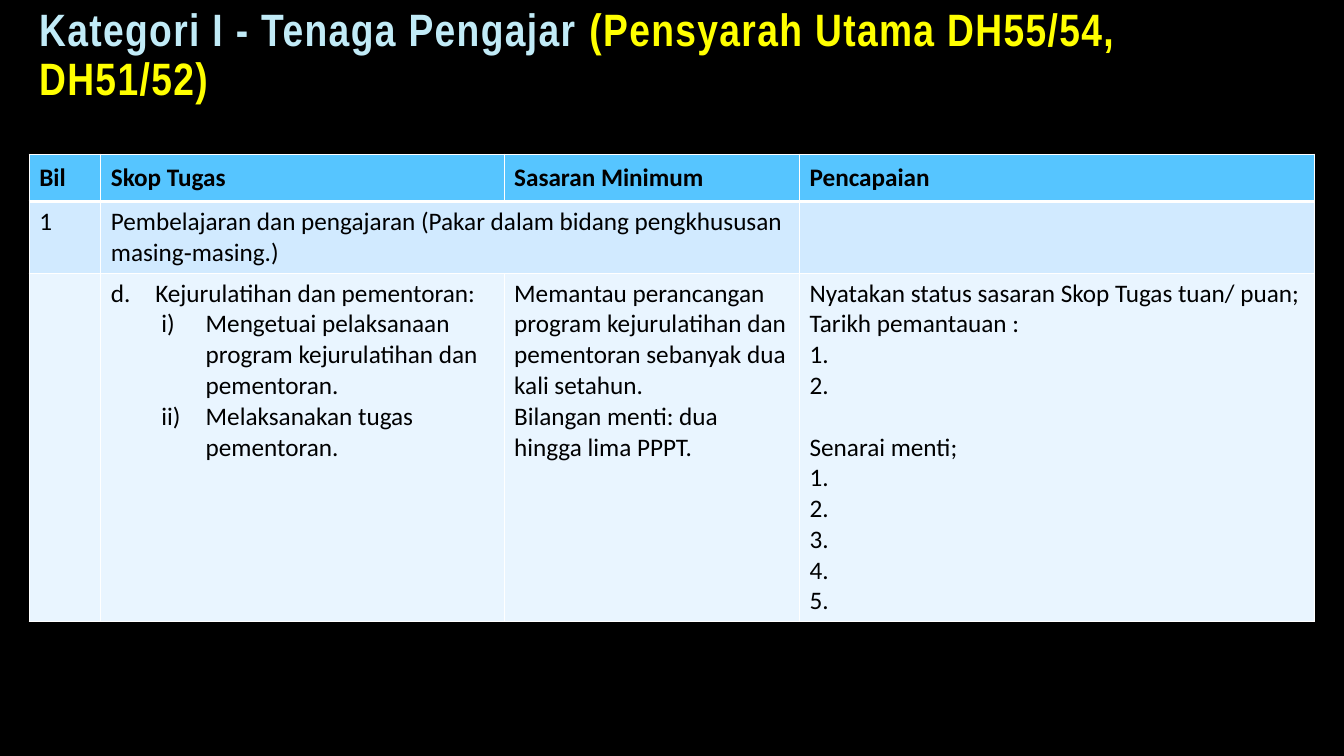
from lxml.etree import SubElement
from pptx import Presentation
from pptx.dml.color import RGBColor
from pptx.enum.text import MSO_ANCHOR
from pptx.oxml import parse_xml
from pptx.oxml.ns import nsdecls, qn
from pptx.util import Inches, Pt

BLACK = RGBColor(0x00, 0x00, 0x00)
WHITE = RGBColor(0xFF, 0xFF, 0xFF)
PALE_CYAN = RGBColor(0xC1, 0xEB, 0xF7)
YELLOW = RGBColor(0xFF, 0xFF, 0x00)
HEADER_BLUE = RGBColor(0x56, 0xC5, 0xFF)
TOPIC_BLUE = RGBColor(0xD1, 0xEA, 0xFF)
DETAIL_BLUE = RGBColor(0xE9, 0xF5, 0xFF)

TITLE_FORMAT = {"name": "Arial Narrow", "size": Pt(32.4), "bold": True}
HEADER_FORMAT = {"name": "Calibri", "size": Pt(18), "bold": True}
BODY_FORMAT = {**HEADER_FORMAT, "bold": False}


def add_span(para, text, values, color):
    span = para.add_run()
    span.text = text
    for name, value in values.items():
        setattr(span.font, name, value)
    span.font.color.rgb = color
    return span


def add_border(cell, side, points):
    cell._tc.get_or_add_tcPr().append(parse_xml(
        f'<a:ln{side} {nsdecls("a")} w="{Pt(points)}"><a:solidFill>'
        f'<a:srgbClr val="{WHITE}"/></a:solidFill></a:ln{side}>'))


deck = Presentation()
deck.slide_width, deck.slide_height = Inches(13.33), Inches(7.5)
page = deck.slides.add_slide(deck.slide_layouts[6])
page.background.fill.solid()
page.background.fill.fore_color.rgb = BLACK

# Task table: each cell is a list of paragraphs
rows = [
    [["Bil"], ["Skop Tugas"], ["Sasaran Minimum"], ["Pencapaian"]],
    [["1"], ["Pembelajaran dan pengajaran (Pakar dalam bidang pengkhususan masing‐masing.)"], [], []],
    [[],
     ["Kejurulatihan dan pementoran:",
      "Mengetuai pelaksanaan program kejurulatihan dan pementoran.",
      "Melaksanakan tugas pementoran."],
     ["Memantau perancangan program kejurulatihan dan pementoran sebanyak dua kali setahun.",
      "Bilangan menti: dua hingga lima PPPT."],
     ["Nyatakan status sasaran Skop Tugas tuan/ puan;", "Tarikh pemantauan :", "1.", "2.",
      "Senarai menti;", "1.", "2.", "3.", "4.", "5."]],
]
row_fills = [HEADER_BLUE, TOPIC_BLUE, DETAIL_BLUE]
frame = page.shapes.add_table(3, 4, Inches(0.29), Inches(1.53), Inches(12.75), Inches(4.87))
table = frame.table
for column, width in zip(table.columns, [0.71, 4, 2.93, 5.11]):
    column.width = Inches(width)
for row, height in zip(table.rows, [0.47, 0.43, 2.52]):
    row.height = Inches(height)

for row_index, (row, fill) in enumerate(zip(rows, row_fills)):
    is_header = row_index == 0
    for column_index, texts in enumerate(row):
        cell = table.cell(row_index, column_index)
        for side in "LRTB":
            under_header = (row_index, side) in [(0, "B"), (1, "T")]
            add_border(cell, side, 3 if under_header else 1)
        cell.fill.solid()
        cell.fill.fore_color.rgb = fill
        if is_header:
            cell.vertical_anchor = MSO_ANCHOR.MIDDLE
        for index, text in enumerate(texts):
            para = cell.text_frame.paragraphs[0] if index == 0 else cell.text_frame.add_paragraph()
            add_span(para, text, HEADER_FORMAT if is_header else BODY_FORMAT, BLACK)
table.cell(1, 1).merge(table.cell(1, 2))

# Gap above the mentee list
table.cell(2, 3).text_frame.paragraphs[4].space_before = Pt(22)

# Numbering of the task scope
for index, para in enumerate(table.cell(2, 1).text_frame.paragraphs):
    para.level = min(index, 1)
    properties = para._p.get_or_add_pPr()
    properties.set("marL", str(Inches(0.94 if index else 0.44)))
    properties.set("indent", str(Inches(-0.44)))
    numbering = SubElement(properties, qn("a:buAutoNum"))
    numbering.set("type", "romanLcParenR" if index else "alphaLcPeriod")
    if index == 0:
        numbering.set("startAt", "4")

# Title
box = page.shapes.add_textbox(Inches(0.29), Inches(0.42), Inches(11.37), Inches(0.67))
box.text_frame.word_wrap = True
box.text_frame.vertical_anchor = MSO_ANCHOR.BOTTOM
para = box.text_frame.paragraphs[0]
para.line_spacing = 0.9
for text, color in [("Kategori I - Tenaga Pengajar ", PALE_CYAN),
                    ("(Pensyarah Utama DH55/54, DH51/52)", YELLOW)]:
    span = add_span(para, text, TITLE_FORMAT, color)
    span.font._element.set("spc", "100")

deck.save("out.pptx")
